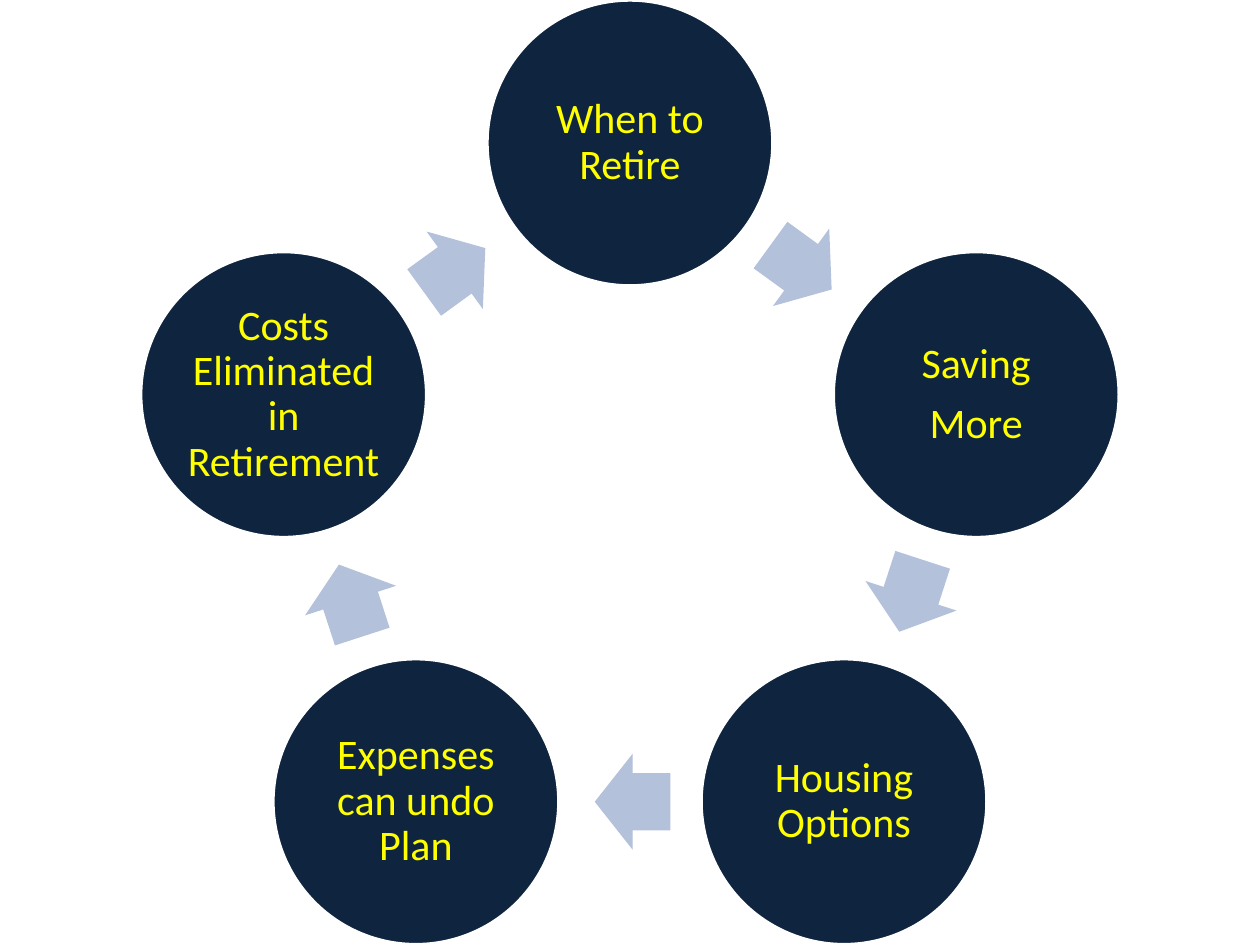
from math import cos, radians, sin

from pptx import Presentation
from pptx.dml.color import RGBColor
from pptx.enum.shapes import MSO_SHAPE
from pptx.enum.text import MSO_ANCHOR, PP_ALIGN
from pptx.util import Inches, Pt

OVAL, ARROW = MSO_SHAPE.OVAL, MSO_SHAPE.RIGHT_ARROW
MIDDLE, CENTER = MSO_ANCHOR.MIDDLE, PP_ALIGN.CENTER

NAVY = RGBColor(0x0F, 0x24, 0x3E)
PALE = RGBColor(0xB3, 0xC1, 0xDB)
WHITE = RGBColor(0xFF, 0xFF, 0xFF)
YELLOW = RGBColor(0xFF, 0xFF, 0x00)

WIDE, HIGH = 10, 7.5
DISC = 2.27
RING = 2.89
MID_X, MID_Y = WIDE / 2, DISC / 2 + RING
ARROW_W, ARROW_H = 0.6, 0.76
BACK = 0.02  # each arrow sits slightly behind the middle of its gap

STEPS = [
    ["When to Retire"],
    ["Saving", "More"],
    ["Housing Options"],
    ["Expenses can undo Plan"],
    ["Costs Eliminated in Retirement"],
]
TURN = 360 / len(STEPS)


def spot(step):
    """Centre of a disc, clockwise from the top of the ring."""
    angle = radians(step * TURN)
    return MID_X + RING * sin(angle), MID_Y - RING * cos(angle)


def add_form(slide, kind, x, y, w, h, fill):
    """Add a flat shape centred on x, y."""
    form = slide.shapes.add_shape(
        kind, Inches(x - w / 2), Inches(y - h / 2), Inches(w), Inches(h))
    form.shadow.inherit = False
    form.fill.solid()
    form.fill.fore_color.rgb = fill
    return form


def add_text(frame, lines):
    frame.word_wrap = True
    frame.vertical_anchor = MIDDLE
    frame.margin_left = frame.margin_right = Inches(0.03)
    frame.margin_top = frame.margin_bottom = Inches(0.03)
    for i, line in enumerate(lines):
        para = frame.add_paragraph() if i else frame.paragraphs[0]
        para.alignment = CENTER
        para.line_spacing = 0.9
        para.space_after = Pt(8.4)
        run = para.add_run()
        run.text = line
        run.font.name = "Calibri"
        run.font.size = Pt(24)
        run.font.color.rgb = YELLOW


def add_disc(slide, step, lines):
    disc = add_form(slide, OVAL, *spot(step), DISC, DISC, NAVY)
    disc.line.color.rgb = WHITE
    disc.line.width = Pt(2)
    add_text(disc.text_frame, lines)


def add_arrow(slide, step):
    """Add the arrow from one disc to the next."""
    (x1, y1), (x2, y2) = spot(step), spot(step + 1)
    turn = (step + 0.5) * TURN
    x = (x1 + x2) / 2 - BACK * cos(radians(turn))
    y = (y1 + y2) / 2 - BACK * sin(radians(turn))
    arrow = add_form(slide, ARROW, x, y, ARROW_W, ARROW_H, PALE)
    arrow.line.fill.background()
    arrow.adjustments[0] = 0.6
    arrow.adjustments[1] = 0.5
    arrow.rotation = turn


def main():
    deck = Presentation()
    deck.slide_width, deck.slide_height = Inches(WIDE), Inches(HIGH)
    slide = deck.slides.add_slide(deck.slide_layouts[6])
    for step, lines in enumerate(STEPS):
        add_disc(slide, step, lines)
        add_arrow(slide, step)
    deck.save("out.pptx")


if __name__ == "__main__":
    main()
